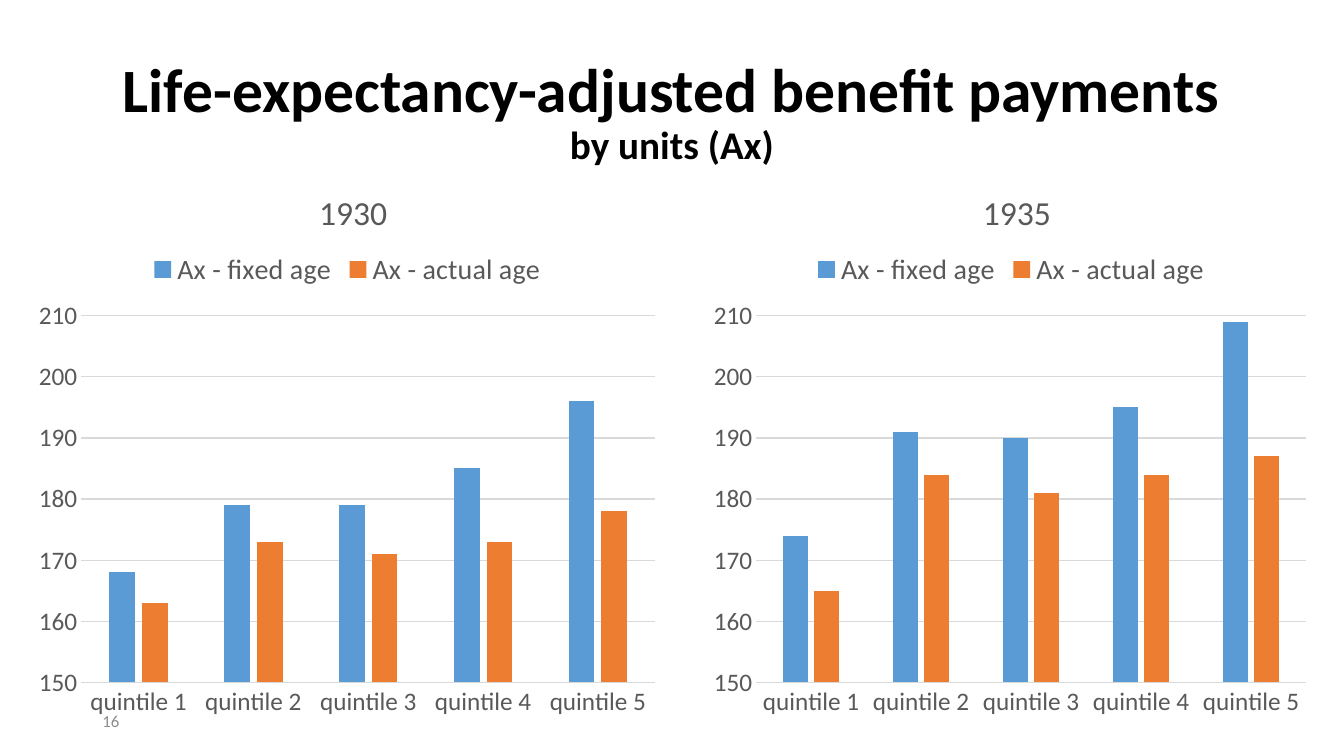
from dataclasses import dataclass

from lxml import etree
from pptx import Presentation
from pptx.chart.data import CategoryChartData
from pptx.dml.color import RGBColor
from pptx.enum.chart import XL_CHART_TYPE, XL_LEGEND_POSITION, XL_TICK_MARK
from pptx.enum.text import MSO_ANCHOR, PP_ALIGN
from pptx.oxml.ns import qn
from pptx.util import Inches, Pt

CLUSTERED = XL_CHART_TYPE.COLUMN_CLUSTERED
LEGEND_TOP = XL_LEGEND_POSITION.TOP
NO_TICKS = XL_TICK_MARK.NONE
MIDDLE = MSO_ANCHOR.MIDDLE
LEFT, CENTER = PP_ALIGN.LEFT, PP_ALIGN.CENTER


@dataclass(frozen=True)
class Theme:
    font: str = "Calibri"
    ink: str = "000000"
    label: str = "595959"
    muted: str = "8C8C8C"
    grid: str = "D9D9D9"
    bars: tuple = ("5B9BD5", "ED7D31")
    heading: int = 44
    subheading: int = 28
    chart_title: int = 24
    legend: int = 20
    axis: int = 18
    page: int = 12
    hairline: float = 0.75


THEME = Theme()

# Grid of 160 columns by 90 rows over the slide
COLUMNS, ROWS = 160, 90
CELL = Inches(1 / 12)

QUINTILES = [f"quintile {number}" for number in range(1, 6)]
COHORTS = [
    {"year": "1930", "column": 3, "width": 76.56,
     "fixed": (168, 179, 179, 185, 196), "actual": (163, 173, 171, 173, 178)},
    {"year": "1935", "column": 83.64, "width": 73.32,
     "fixed": (174, 191, 190, 195, 209), "actual": (165, 184, 181, 184, 187)},
]


def style_font(font, size, color, bold=False):
    font.name, font.size, font.bold = THEME.font, Pt(size), bold
    font.color.rgb = RGBColor.from_string(color)


def add_text(paragraph, text, *, size, color=THEME.ink, bold=False,
             align=None, spacing=None):
    run = paragraph.add_run()
    run.text = text
    style_font(run.font, size, color, bold)
    if align is not None:
        paragraph.alignment = align
    if spacing is not None:
        paragraph.line_spacing = spacing


def style_line(line):
    line.color.rgb = RGBColor.from_string(THEME.grid)
    line.width = Pt(THEME.hairline)


def place_part(part, target=None, **shares):
    """Position a chart part by shares of the chart's size."""
    for old in part.findall(qn("c:layout")):
        part.remove(old)
    layout = etree.Element(qn("c:layout"))
    manual = etree.SubElement(layout, qn("c:manualLayout"))
    settings = {"xMode": "edge", "yMode": "edge", **shares}
    if target:
        settings = {"layoutTarget": target, **settings}
    for key, value in settings.items():
        etree.SubElement(manual, qn(f"c:{key}")).set("val", str(value))
    overlay = part.find(qn("c:overlay"))
    part.insert(0 if overlay is None else part.index(overlay), layout)


class SlideBuilder:
    def __init__(self, theme):
        self.theme = theme
        self.deck = Presentation()
        self.deck.slide_width = CELL * COLUMNS
        self.deck.slide_height = CELL * ROWS
        self.slide = self.deck.slides.add_slide(self.deck.slide_layouts[6])

    def area(self, *cells):
        return [round(CELL * count) for count in cells]

    def text_box(self, *cells):
        frame = self.slide.shapes.add_textbox(*self.area(*cells)).text_frame
        frame.word_wrap = True
        frame.vertical_anchor = MIDDLE
        return frame.paragraphs[0]

    def heading(self, title, subtitle):
        paragraph = self.text_box(11, 4.8, 138, 17.4)
        add_text(paragraph, title, size=self.theme.heading, bold=True,
                 align=CENTER, spacing=0.9)
        paragraph.add_line_break()
        add_text(paragraph, subtitle, size=self.theme.subheading, bold=True)

    def page_number(self, number):
        add_text(self.text_box(11, 83.4, 36, 4.8), number,
                 size=self.theme.page, color=self.theme.muted, align=LEFT)

    def cohort_chart(self, year, column, width, fixed, actual):
        theme = self.theme
        payments = CategoryChartData(number_format="#,##0")
        payments.categories = QUINTILES
        payments.add_series("Ax - fixed age", fixed)
        payments.add_series("Ax - actual age", actual)
        chart = self.slide.shapes.add_chart(
            CLUSTERED, *self.area(column, 18.84, width, 67.8), payments).chart
        style_font(chart.font, theme.axis, theme.label)

        # Bars
        plot = chart.plots[0]
        plot.gap_width, plot.overlap, plot.vary_by_categories = 219, -27, False
        for series, color in zip(plot.series, theme.bars):
            series.format.fill.solid()
            series.format.fill.fore_color.rgb = RGBColor.from_string(color)

        # Axes
        quintiles, units = chart.category_axis, chart.value_axis
        for axis in (quintiles, units):
            axis.major_tick_mark = axis.minor_tick_mark = NO_TICKS
            style_font(axis.tick_labels.font, theme.axis, theme.label)
        style_line(quintiles.format.line)
        units.format.line.fill.background()
        units.minimum_scale, units.maximum_scale, units.major_unit = 150, 210, 10
        units.has_major_gridlines = True
        style_line(units.major_gridlines.format.line)
        units.tick_labels.number_format = "#,##0"
        units.tick_labels.number_format_is_linked = False

        # Title and legend
        chart.has_title = True
        chart.chart_title.include_in_layout = False
        add_text(chart.chart_title.text_frame.paragraphs[0], year,
                 size=theme.chart_title, color=theme.label)
        chart.has_legend = True
        chart.legend.position = LEGEND_TOP
        chart.legend.include_in_layout = False
        style_font(chart.legend.font, theme.legend, theme.label)

        # Title and legend are centred from half their width in columns
        body = chart.element.find(qn("c:chart"))
        place_part(body.find(qn("c:title")), x=0.5 - 4 / width, y=0.045)
        place_part(body.find(qn("c:legend")), x=0.5 - 24 / width, y=0.155)
        place_part(body.find(qn("c:plotArea")), "inner",
                   x=0.087, y=0.277, w=0.893, h=0.643)


def main():
    builder = SlideBuilder(THEME)
    builder.heading("Life-expectancy-adjusted benefit payments", "by units (Ax)")
    for cohort in COHORTS:
        builder.cohort_chart(**cohort)
    builder.page_number("16")
    builder.deck.save("out.pptx")


if __name__ == "__main__":
    main()
